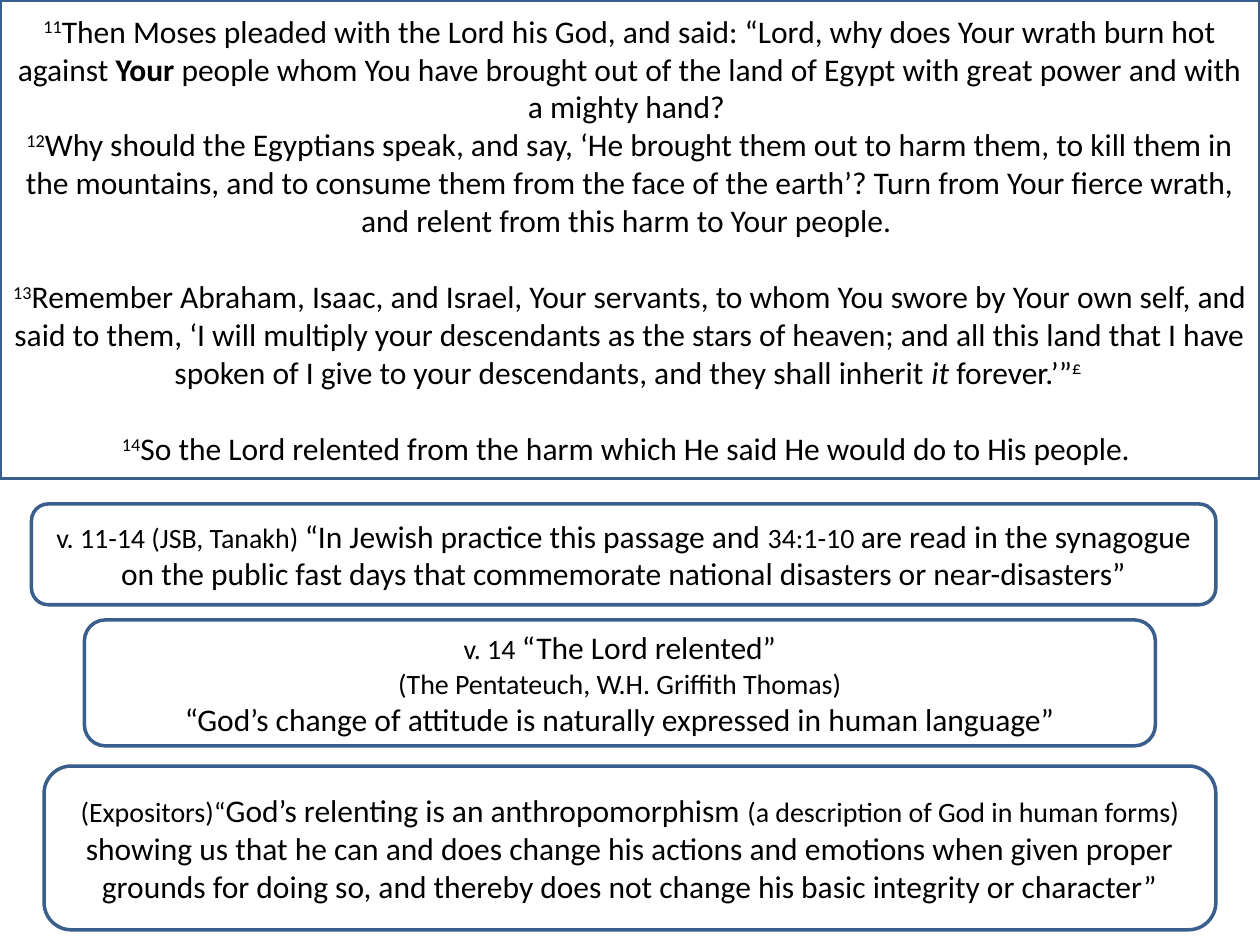
from pptx import Presentation, util as u
from pptx.dml.color import RGBColor
from pptx.enum import shapes, text

WHITE = RGBColor(0xFF, 0xFF, 0xFF)
BLACK = RGBColor(0, 0, 0)
BLUE = RGBColor(0x3A, 0x5F, 0x8C)
BLANK_LINE = 22  # points of space in front of a separated verse

# Formats of a span
VERSE = {"size": 18}
NUMBER = {"size": 18, "raised": True}
STRONG = {"size": 18, "bold": True}
SLANTED = {"size": 18, "italic": True}
SMALL = {"size": 16}

# Each paragraph: space before, then its spans; "\n" is a line break
SCRIPTURE = [
    (0, [
        ("11", NUMBER),
        ("Then Moses pleaded with the Lord his God, and said: “Lord, why does "
         "Your wrath burn hot against ", VERSE),
        ("Your", STRONG),
        (" people whom You have brought out of the land of Egypt with great "
         "power and with a mighty hand? \n", VERSE),
        ("12", NUMBER),
        ("Why should the Egyptians speak, and say, ‘He brought them out to harm "
         "them, to kill them in the mountains, and to consume them from the face "
         "of the earth’? Turn from Your fierce wrath, and relent from this harm "
         "to Your people. ", VERSE),
    ]),
    (BLANK_LINE, [
        ("13", NUMBER),
        ("Remember Abraham, Isaac, and Israel, Your servants, to whom You swore "
         "by Your own self, and said to them, ‘I will multiply your descendants "
         "as the stars of heaven; and all this land that I have spoken of I give "
         "to your descendants, and they shall inherit ", VERSE),
        ("it", SLANTED),
        (" forever.’”", VERSE),
        ("£ ", NUMBER),
    ]),
    (BLANK_LINE, [
        ("14", NUMBER),
        ("So the Lord relented from the harm which He said He would do to His "
         "people. ", VERSE),
    ]),
]
FAST_DAYS = [
    (0, [
        ("v. 11-14 (JSB, Tanakh) ", SMALL),
        ("“In Jewish practice this passage and ", VERSE),
        ("34:1-10 ", SMALL),
        ("are read in the synagogue on the public fast days that commemorate "
         "national disasters or near-disasters”", VERSE),
    ]),
]
RELENTED = [
    (0, [("v. 14 ", SMALL), ("“The Lord relented”", VERSE)]),
    (0, [
        ("(The Pentateuch, W.H. Griffith Thomas)\n", SMALL),
        ("“God’s change of attitude is naturally expressed in human language”",
         VERSE),
    ]),
]
ANTHROPOMORPHISM = [
    (0, [
        ("(Expositors)“", SMALL),
        ("God’s relenting is an anthropomorphism ", VERSE),
        ("(a description of God in human forms) ", SMALL),
        ("showing us that he can and does change his actions and emotions when "
         "given proper grounds for doing so, and thereby does not change his "
         "basic integrity or character”", VERSE),
    ]),
]

RECTANGLE = shapes.MSO_SHAPE.RECTANGLE
ROUNDED = shapes.MSO_SHAPE.ROUNDED_RECTANGLE
BOXES = [  # outline, (left, top, width, height), paragraphs
    (RECTANGLE, (0, 0, 10, 3.8), SCRIPTURE),
    (ROUNDED, (0.25, 4, 9.4, 0.8), FAST_DAYS),
    (ROUNDED, (0.67, 4.92, 8.5, 1), RELENTED),
    (ROUNDED, (0.35, 6.08, 9.3, 1.3), ANTHROPOMORPHISM),
]


def add_span(para, words, look):
    """Add one run, followed by a line break when the words end in one."""
    span = para.add_run()
    span.text = words.rstrip("\n")
    font = span.font
    font.name = "Calibri"
    font.color.rgb = BLACK
    values = dict(look, size=u.Pt(look["size"]))
    if values.pop("raised", False):
        span._r.get_or_add_rPr().set("baseline", "30000")
    for name, value in values.items():
        setattr(font, name, value)
    if words.endswith("\n"):
        para.add_line_break()


def add_box(page, outline, place, paragraphs):
    box = page.shapes.add_shape(outline, *map(u.Inches, place))
    box.shadow.inherit = False
    box.fill.solid()
    box.fill.fore_color.rgb = WHITE
    box.line.color.rgb = BLUE
    box.line.width = u.Pt(2)
    frame = box.text_frame
    frame.word_wrap = True
    frame.vertical_anchor = text.MSO_ANCHOR.MIDDLE
    for index, (space, spans) in enumerate(paragraphs):
        para = frame.add_paragraph() if index else frame.paragraphs[0]
        para.alignment = text.PP_ALIGN.CENTER
        para.space_before = u.Pt(space)
        for words, look in spans:
            add_span(para, words, look)


def main():
    deck = Presentation()
    deck.slide_width, deck.slide_height = u.Inches(10), u.Inches(7.5)
    page = deck.slides.add_slide(deck.slide_layouts[6])
    for outline, place, paragraphs in BOXES:
        add_box(page, outline, place, paragraphs)
    deck.save("out.pptx")


if __name__ == "__main__":
    main()
